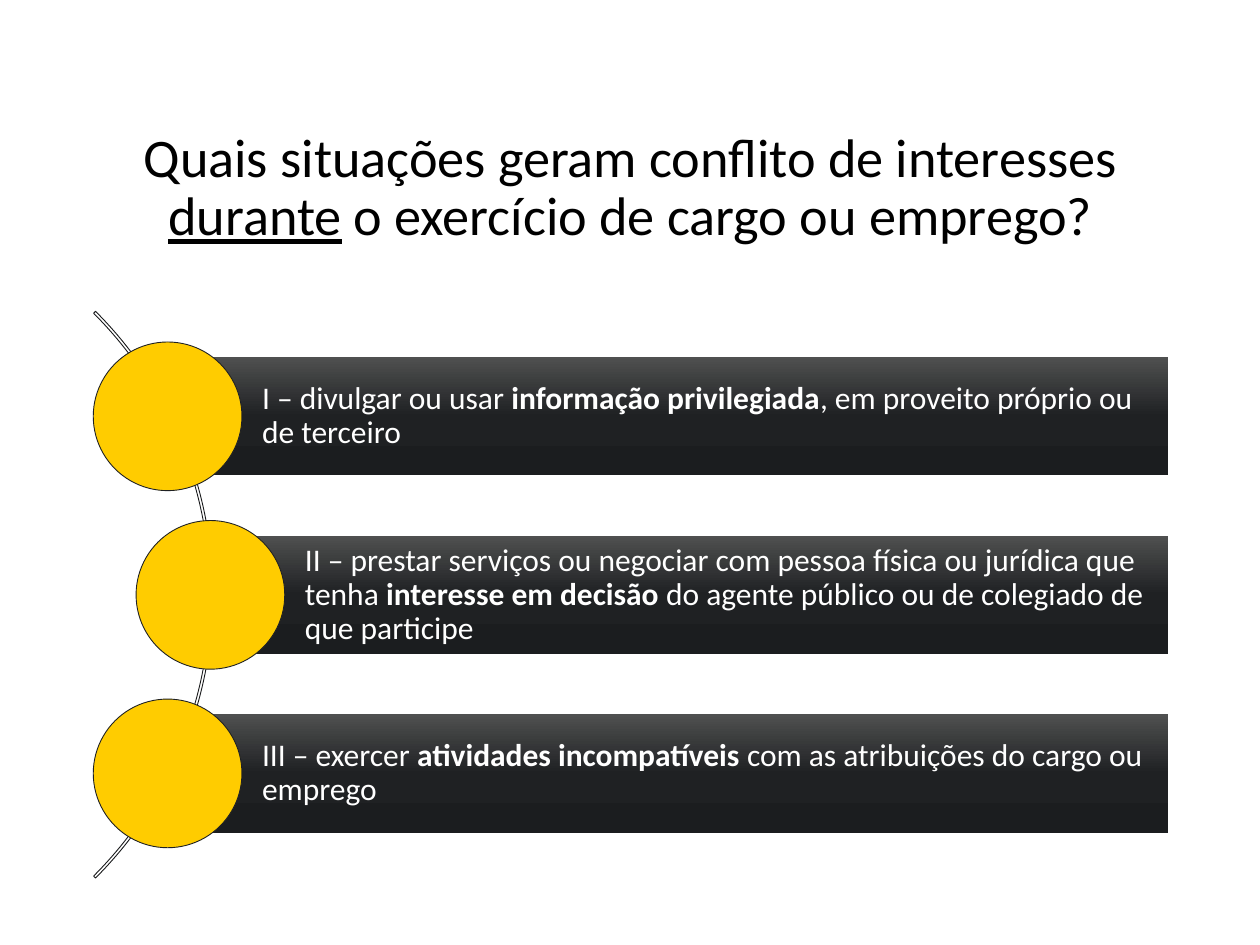
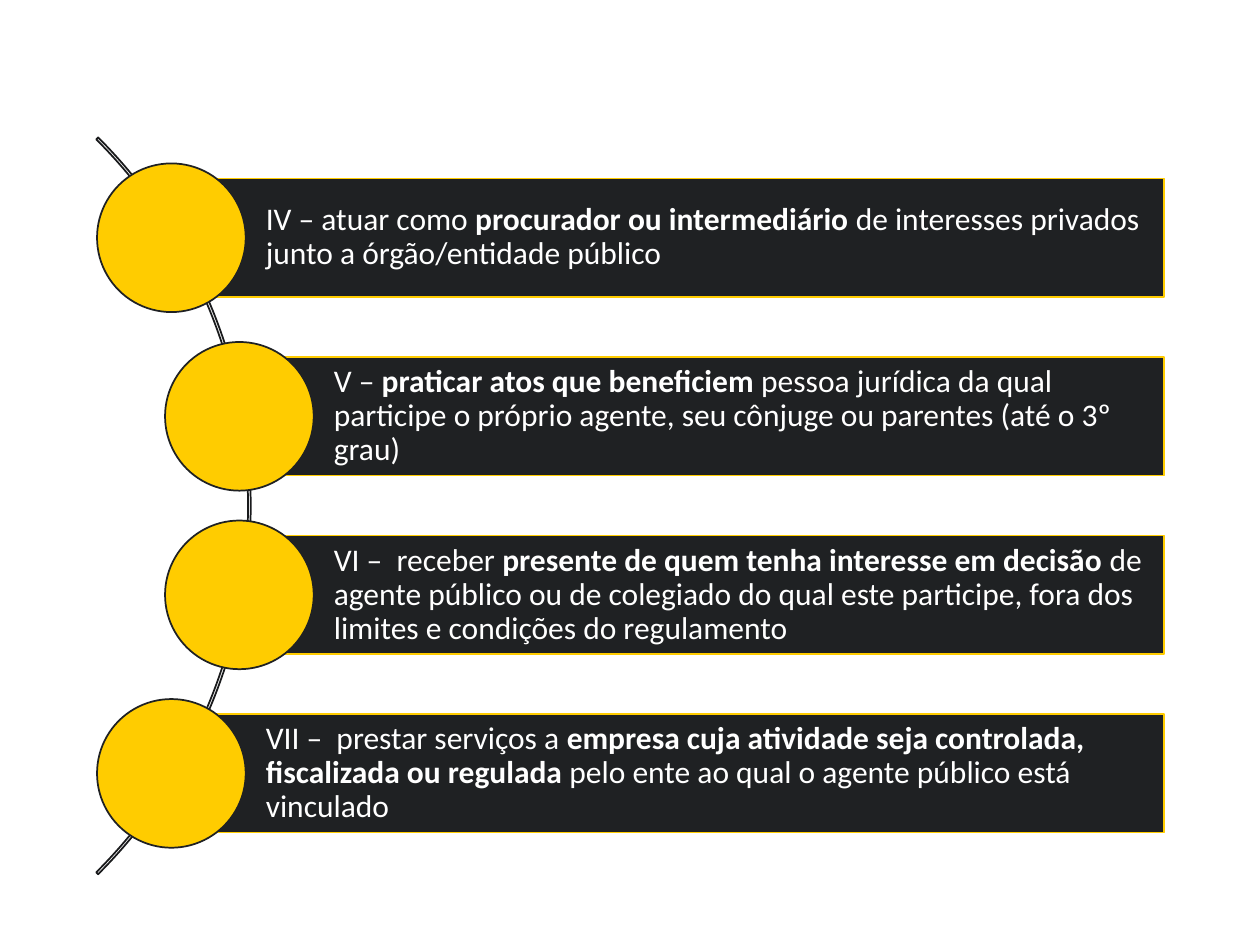
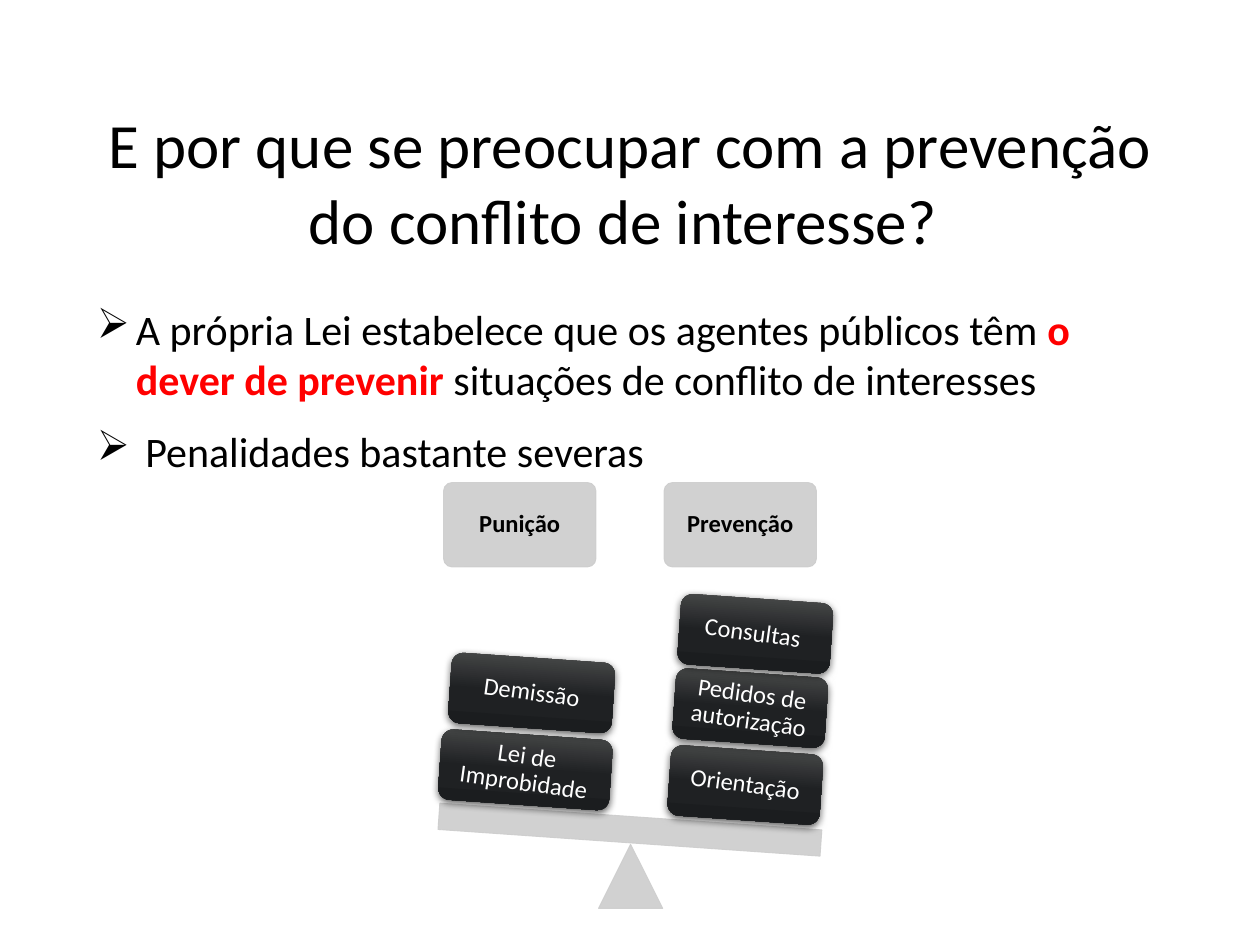
from pptx import Presentation
from pptx.dml.color import RGBColor
from pptx.enum.shapes import MSO_SHAPE
from pptx.enum.text import MSO_ANCHOR, MSO_AUTO_SIZE, PP_ALIGN
from pptx.oxml import parse_xml
from pptx.oxml.ns import nsdecls, qn
from pptx.util import Inches, Pt

BLACK, WHITE, RED = "000000", "FFFFFF", "FF0000"
DARK, YELLOW, GRAY = "1F2123", "FFCC00", "CDCDCD"
STOPS = ((0, "4F5050"), (50, DARK), (100, "1B1D1F"))
GRADIENT = (f'<a:gradFill {nsdecls("a")} rotWithShape="1"><a:gsLst>'
            + "".join(f'<a:gs pos="{pos * 1000}"><a:srgbClr val="{c}"/></a:gs>' for pos, c in STOPS)
            + '</a:gsLst><a:lin ang="5400000" scaled="0"/></a:gradFill>')
SHADOW = (f'<a:outerShdw {nsdecls("a")} blurRad="57150" dist="19050" dir="5400000" algn="ctr" '
          'rotWithShape="0"><a:srgbClr val="000000"><a:alpha val="63000"/></a:srgbClr></a:outerShdw>')


def draw(slide, kind, box, fill=None, line=None, width=0.5):
    """Add a shape; fill is a hex colour, "gradient" or None."""
    sp = slide.shapes.add_shape(kind, *map(Inches, box))
    sp.shadow.inherit = False
    sp.fill.background()
    if fill == "gradient":
        pr = sp._element.spPr
        pr.replace(pr.find(qn("a:noFill")), parse_xml(GRADIENT))
    elif fill:
        sp.fill.solid()
        sp.fill.fore_color.rgb = RGBColor.from_string(fill)
    sp.line.fill.background()
    if line:
        sp.line.color.rgb = RGBColor.from_string(line)
        sp.line.width = Pt(width)
    return sp


def write(p, text, size, color, align=PP_ALIGN.LEFT, spacing=0.9):
    """Fill a paragraph and return the runs marked between asterisks."""
    p.alignment, p.line_spacing = align, spacing
    for part in text.split("*"):
        r = p.add_run()
        r.text = part
        r.font.name, r.font.size, r.font.bold = "Calibri", Pt(size), False
        r.font.color.rgb = RGBColor.from_string(color)
    return p.runs[1::2]


prs = Presentation()
prs.slide_width, prs.slide_height = Inches(10), Inches(7.5)
TITLE_ONLY, BLANK = prs.slide_layouts[5], prs.slide_layouts[6]
TITLE_BOX = (0.67, 0.79, 8.66, 1.42)

situations = prs.slides.add_slide(TITLE_ONLY)
continued = prs.slides.add_slide(BLANK)
prevention = prs.slides.add_slide(TITLE_ONLY)

# Titles
titles = (
    (situations, "Quais situações geram conflito de interesses *durante* o exercício de cargo ou emprego?",
     31, 0.9, MSO_ANCHOR.MIDDLE),
    (prevention, "E por que se preocupar com a prevenção do conflito de interesse? ",
     36, 1.0, MSO_ANCHOR.TOP),
)
for slide, text, size, spacing, anchor in titles:
    title = slide.shapes.title
    title.left, title.top, title.width, title.height = map(Inches, TITLE_BOX)
    tf = title.text_frame
    tf.auto_size, tf.vertical_anchor = MSO_AUTO_SIZE.NONE, anchor
    for r in write(tf.paragraphs[0], text, size, BLACK, PP_ALIGN.CENTER, spacing):
        r.font.underline = True

# Curved lists: bars on a shared row grid, each starting at its circle's centre
ROW, BAR_H, CIRCLE = 1.417, 0.94, 1.18
curved_lists = (
    (situations, 2, (-4.67, 1.54, 6.36), 0.0034, 9.27, "gradient", None, 0.5, (
        (1.33, "I – divulgar ou usar *informação privilegiada*, em proveito próprio ou de terceiro"),
        (1.67, "II – prestar serviços ou negociar com pessoa física ou jurídica que tenha "
               "*interesse em decisão *do agente público ou de colegiado de que participe"),
        (1.33, "III – exercer *atividades incompatíveis *com as atribuições do cargo ou emprego"))),
    (continued, 1, (-6.28, -0.12, 8.27), 0.0026, 9.24, DARK, YELLOW, 1, (
        (1.36, "IV – atuar como *procurador ou intermediário *de interesses privados "
               "junto a órgão/entidade público"),
        (1.9, "V – *praticar atos que beneficiem *pessoa jurídica da qual participe "
              "o próprio agente, seu cônjuge ou parentes (até o 3º grau)"),
        (1.9, "VI –  receber *presente de quem tenha interesse em decisão *de agente público "
              "ou de colegiado do qual este participe, fora dos limites e condições do regulamento"),
        (1.36, "VII –  prestar serviços a *empresa cuja atividade seja controlada, fiscalizada "
               "ou regulada *pelo ente ao qual o agente público está vinculado"))),
)
for slide, first_row, (x, y, size), thickness, right, fill, edge, width, items in curved_lists:
    arc = draw(slide, MSO_SHAPE.BLOCK_ARC, (x, y, size, size), None, "191A1C", width)
    for i, value in enumerate((189, 27, thickness)):
        arc.adjustments[i] = value
    for row, (left, text) in enumerate(items, first_row):
        top = row * ROW
        bar = draw(slide, MSO_SHAPE.RECTANGLE, (left, top, right - left, BAR_H), fill, edge, width)
        tf = bar.text_frame
        tf.word_wrap, tf.vertical_anchor = True, MSO_ANCHOR.MIDDLE
        tf.margin_left = Inches(0.75)
        tf.margin_right = tf.margin_top = tf.margin_bottom = Inches(0.05)
        for r in write(tf.paragraphs[0], text, 18, WHITE):
            r.font.bold = True
        draw(slide, MSO_SHAPE.OVAL, (left - CIRCLE / 2, top + (BAR_H - CIRCLE) / 2, CIRCLE, CIRCLE),
             YELLOW, DARK, width)

# Balance: headers, fulcrum and beam in translucent gray
TILT, PAD = 4, Inches(0.06)
labels = []
parts = [draw(prevention, MSO_SHAPE.ISOSCELES_TRIANGLE, (4.75, 6.7, 0.51, 0.51), GRAY, GRAY),
         draw(prevention, MSO_SHAPE.RECTANGLE, (3.48, 6.48, 3.04, 0.21), GRAY, GRAY)]
parts[1].rotation = TILT
for left, text in ((3.52, "*Punição*"), (5.27, "*Prevenção*")):
    header = draw(prevention, MSO_SHAPE.ROUNDED_RECTANGLE, (left, 3.83, 1.21, 0.67), GRAY, GRAY)
    header.adjustments[0] = 0.1
    parts.append(header)
    labels.append((header, text, BLACK))
for part in parts:
    for clr in part._element.spPr.iter(qn("a:srgbClr")):
        clr.append(parse_xml(f'<a:alpha {nsdecls("a")} val="90000"/>'))

# Weights, from the beam upwards; their labels lean twice as far
weights = (
    (5.31, 5.95, 1.21, "Orientação"),
    (5.35, 5.34, 1.21, "Pedidos de autorização"),
    (5.39, 4.75, 1.21, "Consultas "),
    (3.49, 5.83, 1.36, "Lei de Improbidade"),
    (3.57, 5.22, 1.3, "Demissão"),
)
for left, top, width, text in weights:
    box = (left, top, width, 0.56)
    weight = draw(prevention, MSO_SHAPE.ROUNDED_RECTANGLE, box, "gradient")
    weight.rotation = TILT
    weight._element.spPr.find(qn("a:effectLst")).append(parse_xml(SHADOW))
    label = prevention.shapes.add_textbox(*map(Inches, box))
    label.rotation = 2 * TILT
    labels.append((label, text, WHITE))

for sp, text, color in labels:
    tf = sp.text_frame
    tf.word_wrap, tf.vertical_anchor = True, MSO_ANCHOR.MIDDLE
    tf.margin_left = tf.margin_right = tf.margin_top = tf.margin_bottom = PAD
    for r in write(tf.paragraphs[0], text, 14, color, PP_ALIGN.CENTER):
        r.font.bold = True

# Reasons
tf = prevention.shapes.add_textbox(*map(Inches, (0.67, 2.36, 8.66, 4.72))).text_frame
tf.word_wrap = True
reasons = ("A própria Lei estabelece que os agentes públicos têm *o dever de prevenir* "
           "situações de conflito de interesses",
           " Penalidades bastante severas")
for i, text in enumerate(reasons):
    p = tf.add_paragraph() if i else tf.paragraphs[0]
    pPr = p._p.get_or_add_pPr()
    pPr.set("marL", str(Inches(0.31)))
    pPr.set("indent", str(-Inches(0.31)))
    pPr.append(parse_xml(f'<a:buChar {nsdecls("a")} char="➢"/>'))
    p.space_after = Pt(0 if i else 12)
    for r in write(p, text, 24, BLACK, spacing=1.0):
        r.font.bold = True
        r.font.color.rgb = RGBColor.from_string(RED)

prs.save("out.pptx")
